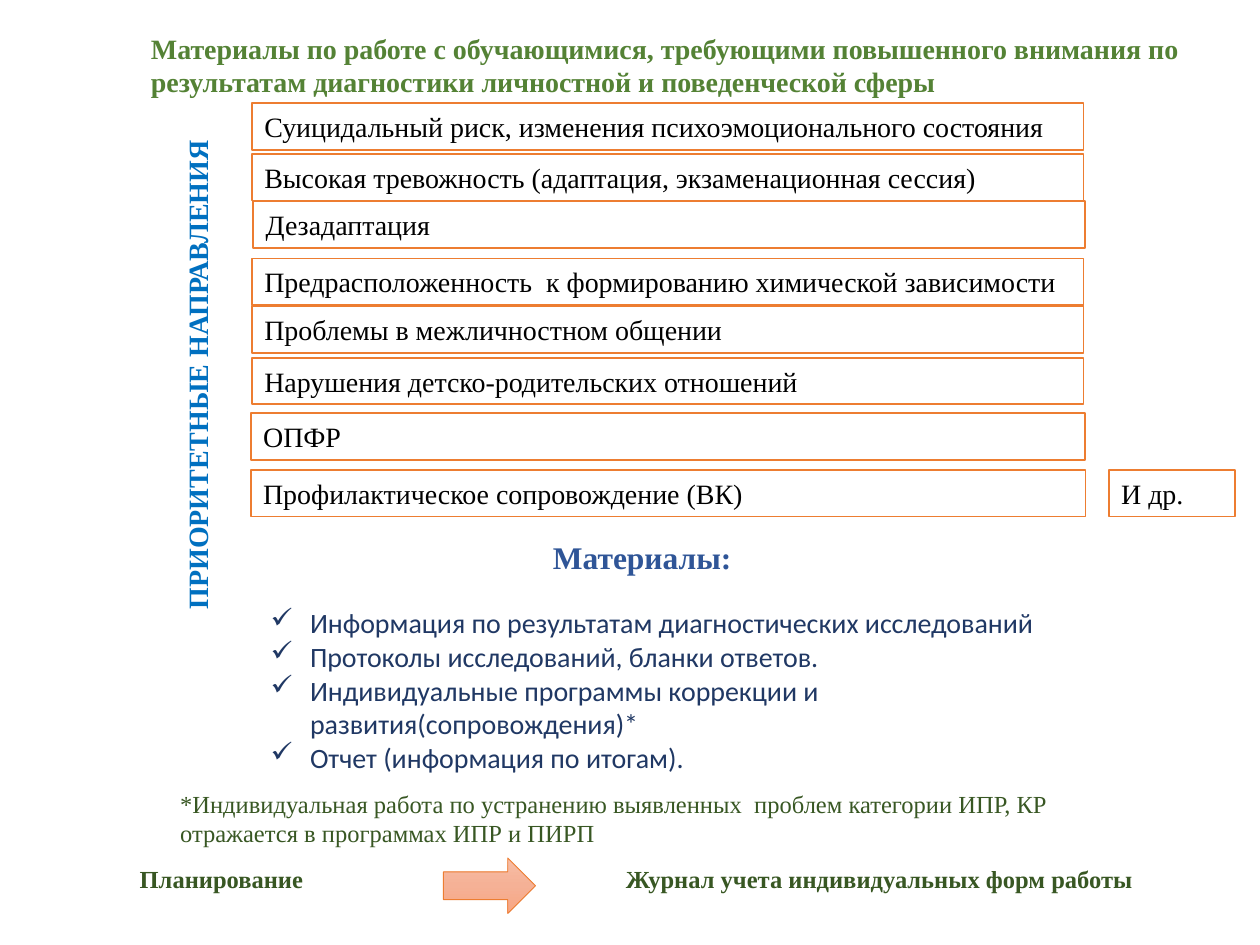
from copy import deepcopy

from lxml.etree import SubElement
from pptx import Presentation
from pptx.dml.color import RGBColor
from pptx.enum.shapes import MSO_SHAPE as Shape
from pptx.enum.text import MSO_ANCHOR as Anchor, PP_ALIGN as Align
from pptx.oxml.ns import qn
from pptx.util import Pt

SERIF = "Times New Roman"
ORANGE, WHITE, BLACK = "ED7D31", "FFFFFF", "000000"
GREEN, DARK_GREEN = "548235", "385723"
BLUE, HEADING_BLUE, NAVY = "0070C0", "2F5597", "203864"
BULLET_INDENT = 22.5
ROW_HEIGHT = 26.6

TITLE = ("Материалы по работе с обучающимися, требующими повышенного внимания "
         "по результатам диагностики личностной и поведенческой сферы")
FOOTNOTE = ("*Индивидуальная работа по устранению выявленных  проблем "
            "категории ИПР, КР отражается в программах ИПР и ПИРП")
MATERIALS = [
    "Информация по результатам диагностических исследований",
    "Протоколы исследований, бланки ответов.",
    "Индивидуальные программы коррекции и развития(сопровождения)*",
    "Отчет (информация по итогам).",
]
DIRECTIONS = [
    ("Суицидальный риск, изменения психоэмоционального состояния", 144, 59, 475.2),
    ("Высокая тревожность (адаптация, экзаменационная сессия)", 144, 88, 475.2),
    ("Дезадаптация", 144.8, 115, 475.2),
    ("Предрасположенность  к формированию химической зависимости", 144, 147.7, 475.2),
    ("Проблемы в межличностном общении", 144, 175, 475.2),
    ("Нарушения детско-родительских отношений", 144, 204.5, 475.2),
    ("ОПФР", 143.3, 236.2, 476.6),
    ("Профилактическое сопровождение (ВК)", 143.3, 268.6, 477),
    ("И др.", 633.6, 268.6, 72),
]
ARROW_STOPS = [(0, "F7BDA5"), (0.5, "F5B196"), (1, "F8A582")]


def rgb(value):
    return RGBColor.from_string(value)


def add_bullet(paragraph):
    properties = paragraph._p.get_or_add_pPr()
    properties.set("marL", str(Pt(BULLET_INDENT)))
    properties.set("indent", str(-Pt(BULLET_INDENT)))
    SubElement(properties, qn("a:buChar"), char="✓")


def write(shape, text, size=16, color=BLACK, font=SERIF, bold=False,
          align=Align.LEFT, anchor=Anchor.TOP, bullets=False):
    frame = shape.text_frame
    frame.word_wrap = True
    frame.vertical_anchor = anchor
    lines = [text] if isinstance(text, str) else text
    for index, line in enumerate(lines):
        paragraph = frame.paragraphs[0] if index == 0 else frame.add_paragraph()
        paragraph.alignment = align
        if bullets:
            add_bullet(paragraph)
        run = paragraph.add_run()
        run.text = line
        run.font.name = font
        run.font.size = Pt(size)
        run.font.bold = bold
        run.font.color.rgb = rgb(color)


def add_label(slide, text, box, rotation=0, **style):
    label = slide.shapes.add_textbox(*map(Pt, box))
    label.rotation = rotation
    write(label, text, **style)


def add_outlined(slide, preset, box, width):
    shape = slide.shapes.add_shape(preset, *map(Pt, box))
    shape.shadow.inherit = False
    shape.line.color.rgb = rgb(ORANGE)
    shape.line.width = Pt(width)
    return shape


def add_direction(slide, text, left, top, width):
    row = add_outlined(slide, Shape.RECTANGLE, (left, top, width, ROW_HEIGHT), 1)
    row.fill.solid()
    row.fill.fore_color.rgb = rgb(WHITE)
    write(row, text, anchor=Anchor.MIDDLE)


def add_arrow(slide, box):
    arrow = add_outlined(slide, Shape.RIGHT_ARROW, box, 0.5)
    arrow.fill.gradient()
    arrow.fill.gradient_angle = 270
    stop_list = arrow._element.spPr.find(qn("a:gradFill")).find(qn("a:gsLst"))
    stop_list.append(deepcopy(stop_list[0]))
    for stop, (position, color) in zip(arrow.fill.gradient_stops, ARROW_STOPS):
        stop.position = position
        stop.color.rgb = rgb(color)


def main():
    deck = Presentation()
    deck.slide_width, deck.slide_height = Pt(720), Pt(540)
    slide = deck.slides.add_slide(deck.slide_layouts[6])

    add_label(slide, TITLE, (79.2, 14.4, 609, 46), color=GREEN, bold=True)
    for direction in DIRECTIONS:
        add_direction(slide, *direction)
    add_label(slide, "ПРИОРИТЕТНЫЕ НАПРАВЛЕНИЯ", (-42.5, 200.9, 310.3, 26.6),
              rotation=270, color=BLUE, bold=True, align=Align.CENTER)
    add_label(slide, "Материалы:", (308.9, 303.8, 122.4, 28.8),
              size=18, color=HEADING_BLUE, bold=True)
    add_label(slide, MATERIALS, (147.6, 342.7, 511.2, 104.4),
              color=NAVY, font="Calibri", bullets=True)
    add_label(slide, FOOTNOTE, (95.8, 447.1, 553, 41), size=14, color=DARK_GREEN)
    add_label(slide, "Планирование", (72.7, 490.3, 154.8, 24.5),
              size=14, color=DARK_GREEN, bold=True)
    add_arrow(slide, (253.4, 490.3, 52.6, 31.7))
    add_label(slide, "Журнал учета индивидуальных форм работы",
              (350.6, 490.3, 338.4, 24.5), size=14, color=DARK_GREEN, bold=True)

    deck.save("out.pptx")


if __name__ == "__main__":
    main()
